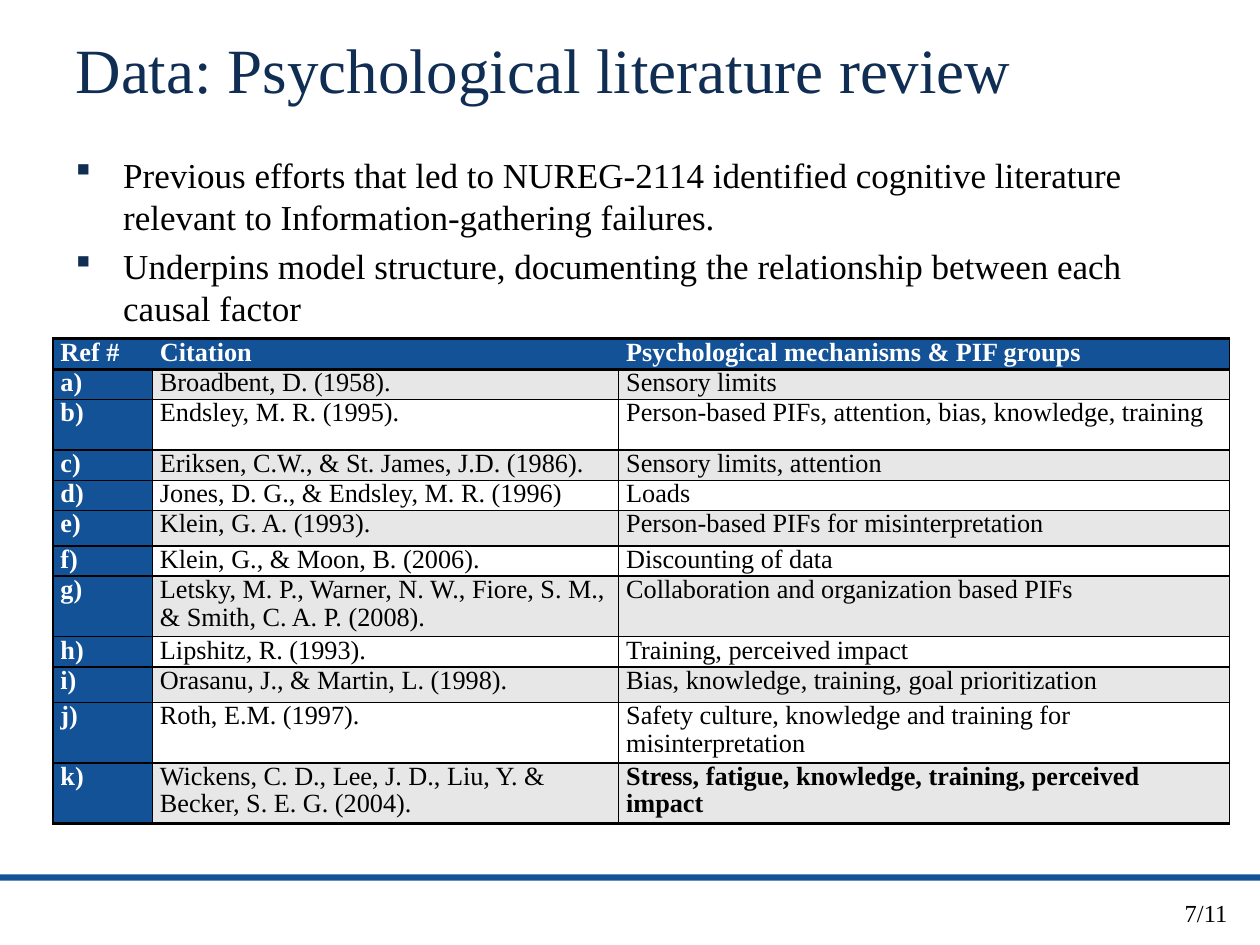
"""Build the slide with the psychological literature review table."""
from lxml import etree
from pptx import Presentation
from pptx.dml.color import RGBColor
from pptx.enum.shapes import MSO_SHAPE
from pptx.enum.text import MSO_ANCHOR, PP_ALIGN
from pptx.oxml.ns import qn
from pptx.util import Inches, Pt

RECTANGLE = MSO_SHAPE.RECTANGLE
MIDDLE, TOP = MSO_ANCHOR.MIDDLE, MSO_ANCHOR.TOP
LEFT, RIGHT, JUSTIFY = PP_ALIGN.LEFT, PP_ALIGN.RIGHT, PP_ALIGN.JUSTIFY

FONT = "Times New Roman"
COLORS = {
    "navy": "102E54",
    "blue": "135297",
    "gray": "E7E7E7",
    "white": "FFFFFF",
    "black": "000000",
}
TITLE = "Data: Psychological literature review"
BULLETS = [
    "Previous efforts that led to NUREG-2114 identified cognitive literature "
    "relevant to Information-gathering failures.",
    "Underpins model structure, documenting the relationship between each causal factor",
]
PAGE_NUMBER = "7/11"
COLUMN_WIDTHS = [0.79, 3.7, 4.85]
HEADER = ("Ref #", "Citation", "Psychological mechanisms & PIF groups")
REFERENCES = [
    ("a)", "Broadbent, D. (1958).", "Sensory limits"),
    ("b)", "Endsley, M. R. (1995).", "Person-based PIFs, attention, bias, knowledge, training"),
    ("c)", "Eriksen, C.W., & St. James, J.D. (1986).", "Sensory limits, attention"),
    ("d)", "Jones, D. G., & Endsley, M. R. (1996)", "Loads"),
    ("e)", "Klein, G. A. (1993).", "Person-based PIFs for misinterpretation"),
    ("f)", "Klein, G., & Moon, B. (2006).", "Discounting of data"),
    ("g)", "Letsky, M. P., Warner, N. W., Fiore, S. M., & Smith, C. A. P. (2008).",
     "Collaboration and organization based PIFs"),
    ("h)", "Lipshitz, R. (1993).", "Training, perceived impact"),
    ("i)", "Orasanu, J., & Martin, L. (1998).", "Bias, knowledge, training, goal prioritization"),
    ("j)", "Roth, E.M. (1997).", "Safety culture, knowledge and training for misinterpretation"),
    ("k)", "Wickens, C. D., Lee, J. D., Liu, Y. & Becker, S. E. G. (2004).",
     "Stress, fatigue, knowledge, training, perceived impact"),
]
ROW_HEIGHTS = [0.23, 0.23, 0.4, 0.23, 0.23, 0.28, 0.23, 0.46, 0.23, 0.28, 0.46, 0.46]


def color(name):
    return RGBColor.from_string(COLORS[name])


def place(shape, left, top, width, height):
    shape.left, shape.top = Inches(left), Inches(top)
    shape.width, shape.height = Inches(width), Inches(height)


def add_text(paragraph, text, size, color_name, bold=False):
    run = paragraph.add_run()
    run.text = text
    run.font.name, run.font.size, run.font.bold = FONT, Pt(size), bold
    run.font.color.rgb = color(color_name)


def add_bullet(paragraph):
    properties = paragraph._p.get_or_add_pPr()
    properties.set("marL", str(Inches(0.38)))
    properties.set("indent", str(-Inches(0.38)))
    bullet_color = etree.SubElement(properties, qn("a:buClr"))
    etree.SubElement(bullet_color, qn("a:srgbClr"), val=COLORS["navy"])
    etree.SubElement(properties, qn("a:buFont"), typeface="Wingdings")
    etree.SubElement(properties, qn("a:buChar"), char="§")


def set_borders(cell, widths):
    properties = cell._tc.get_or_add_tcPr()
    for position, (side, width) in enumerate(widths.items()):
        line = etree.Element(qn(f"a:ln{side}"), w=str(Pt(width)))
        if width:
            fill = etree.SubElement(line, qn("a:solidFill"))
            etree.SubElement(fill, qn("a:srgbClr"), val=COLORS["black"])
        else:
            etree.SubElement(line, qn("a:noFill"))
        properties.insert(position, line)


def add_title(slide):
    title = slide.shapes.title
    place(title, 0.5, 0.05, 8.43, 1.08)
    title.text_frame.vertical_anchor = MIDDLE
    paragraph = title.text_frame.paragraphs[0]
    paragraph.alignment, paragraph.line_spacing = LEFT, 0.85
    add_text(paragraph, TITLE, 36, "navy")


def add_bullets(slide):
    box = slide.shapes.add_textbox(Inches(0.5), Inches(1.17), Inches(9), Inches(4.08))
    frame = box.text_frame
    frame.word_wrap = True
    for index, text in enumerate(BULLETS):
        paragraph = frame.add_paragraph() if index else frame.paragraphs[0]
        add_bullet(paragraph)
        if index:
            paragraph.space_before = Pt(4)
        add_text(paragraph, text, 20, "black")


def add_footer(slide):
    bar = slide.shapes.add_shape(RECTANGLE, 0, Inches(6.94), Inches(10), Inches(0.05))
    bar.shadow.inherit = False
    bar.fill.solid()
    bar.fill.fore_color.rgb = color("blue")
    bar.line.fill.background()
    box = slide.shapes.add_textbox(Inches(9.17), Inches(7.08), Inches(0.67), Inches(0.33))
    box.text_frame.word_wrap = True
    paragraph = box.text_frame.paragraphs[0]
    paragraph.alignment = RIGHT
    add_text(paragraph, PAGE_NUMBER, 14, "black")


def add_references(slide):
    rows = [HEADER] + REFERENCES
    last_row, last_column = len(rows) - 1, len(HEADER) - 1
    frame = slide.shapes.add_table(
        len(rows), len(HEADER), Inches(0.42), Inches(2.69),
        Inches(sum(COLUMN_WIDTHS)), Inches(sum(ROW_HEIGHTS)))
    table = frame.table
    for column, width in zip(table.columns, COLUMN_WIDTHS):
        column.width = Inches(width)
    for row, height in zip(table.rows, ROW_HEIGHTS):
        row.height = Inches(height)
    for row, texts in enumerate(rows):
        for column, text in enumerate(texts):
            cell = table.cell(row, column)
            heading = row == 0 or column == 0
            cell.margin_left = cell.margin_right = Inches(0.06)
            cell.margin_top = cell.margin_bottom = 0
            cell.vertical_anchor = TOP
            cell.fill.solid()
            cell.fill.fore_color.rgb = color("blue" if heading else "gray" if row % 2 else "white")
            set_borders(cell, {
                "L": 1 if row or column == 0 else 0,
                "R": 1 if row or column == last_column else 0,
                "T": 2 if row <= 1 else 1,
                "B": 2 if row in (0, last_row) else 1,
            })
            paragraph = cell.text_frame.paragraphs[0]
            justified = column == 0 or (row == 0 and column == last_column)
            paragraph.alignment = JUSTIFY if justified else LEFT
            paragraph.line_spacing = 0.96
            bold = heading or (row, column) == (last_row, last_column)
            add_text(paragraph, text, 15, "white" if heading else "black", bold)


def main():
    presentation = Presentation()
    presentation.slide_width, presentation.slide_height = Inches(10), Inches(7.5)
    slide = presentation.slides.add_slide(presentation.slide_layouts[5])
    add_title(slide)
    add_bullets(slide)
    add_footer(slide)
    add_references(slide)
    presentation.save("out.pptx")


if __name__ == "__main__":
    main()
